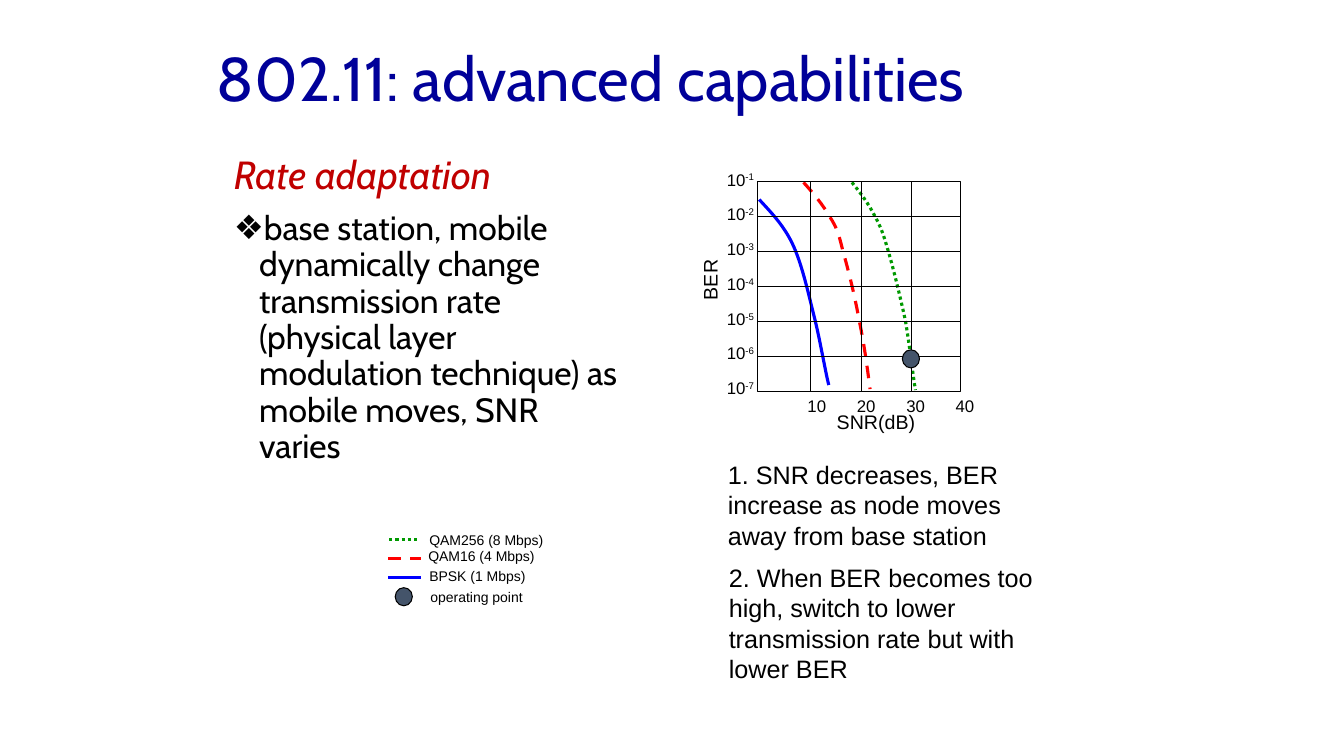
from lxml.etree import SubElement
from pptx import Presentation
from pptx.dml.color import RGBColor
from pptx.enum.dml import MSO_LINE
from pptx.enum.shapes import MSO_CONNECTOR, MSO_SHAPE
from pptx.enum.text import MSO_ANCHOR, MSO_AUTO_SIZE as AUTO_SIZE, PP_ALIGN
from pptx.oxml.ns import qn
from pptx.util import Inches, Pt

COLORS = {
    "title": "000099",
    "heading": "C00000",
    "text": "000000",
    "bpsk": "0000FF",
    "qam16": "FF0000",
    "qam256": "009900",
    "point": "44546A",
}
DASHES = {"qam16": MSO_LINE.DASH, "qam256": MSO_LINE.ROUND_DOT}

# Each curve is a chain of cubic segments: start, then control, control, end
CURVES = {
    "bpsk": [(7.53, 1.98), (7.64, 2.1), (7.77, 2.23), (7.86, 2.42),
             (7.95, 2.61), (8.01, 2.88), (8.07, 3.12),
             (8.13, 3.35), (8.19, 3.71), (8.22, 3.82)],
    "qam16": [(7.97, 1.81), (8.07, 1.92), (8.16, 2.03), (8.23, 2.15),
              (8.3, 2.26), (8.32, 2.32), (8.36, 2.49),
              (8.41, 2.66), (8.48, 2.94), (8.52, 3.17),
              (8.57, 3.4), (8.6, 3.63), (8.63, 3.86)],
    "qam256": [(8.45, 1.81), (8.54, 1.92), (8.62, 2.03), (8.68, 2.15),
               (8.74, 2.26), (8.76, 2.32), (8.81, 2.49),
               (8.86, 2.66), (8.93, 2.95), (8.98, 3.18),
               (9.02, 3.41), (9.06, 3.76), (9.08, 3.87)],
}
# Series, x from, x to, line y, label, label left, label top
LEGEND = [
    ("bpsk", 3.85, 4.18, 5.73, "BPSK (1 Mbps)", 4.16, 5.58),
    ("qam16", 3.85, 4.18, 5.54, "QAM16 (4 Mbps)", 4.15, 5.38),
    ("qam256", 3.86, 4.16, 5.35, "QAM256 (8 Mbps)", 4.16, 5.22),
]
PLOT_LEFT, PLOT_TOP, PLOT_WIDTH, PLOT_HEIGHT = 7.51, 1.8, 2.02, 2.08


def rgb(name):
    return RGBColor.from_string(COLORS[name])


def add_run(paragraph, text, size=12, font="Arial", color="text",
            italic=False, superscript=False):
    run = paragraph.add_run()
    run.text = text
    run.font.size = Pt(size)
    run.font.name = font
    run.font.italic = italic
    run.font.color.rgb = rgb(color)
    if superscript:
        run._r.get_or_add_rPr().set("baseline", "30000")


def place(shape, left, top, width, height):
    shape.left, shape.top = Inches(left), Inches(top)
    shape.width, shape.height = Inches(width), Inches(height)


def add_label(slide, text, left, top, width, height, size=12, wrap=False,
              exponent=None, rotation=0):
    box = slide.shapes.add_textbox(
        Inches(left), Inches(top), Inches(width), Inches(height))
    box.rotation = rotation
    box.text_frame.word_wrap = wrap
    box.text_frame.auto_size = AUTO_SIZE.SHAPE_TO_FIT_TEXT
    paragraph = box.text_frame.paragraphs[0]
    add_run(paragraph, text, size=size)
    if exponent:
        add_run(paragraph, exponent, size=size, superscript=True)


def style_line(line, color="text", width=0.75, dash=None):
    line.color.rgb = rgb(color)
    line.width = Pt(width)
    if dash:
        line.dash_style = dash


def add_line(slide, x1, y1, x2, y2, **line_format):
    connector = slide.shapes.add_connector(
        MSO_CONNECTOR.STRAIGHT, Inches(x1), Inches(y1), Inches(x2), Inches(y2))
    style_line(connector.line, **line_format)
    SubElement(connector._element.spPr, qn("a:effectLst"))
    return connector


def add_curve(slide, series):
    start, *points = [(Inches(x), Inches(y)) for x, y in CURVES[series]]
    builder = slide.shapes.build_freeform(*start)
    builder.add_line_segments(points, close=False)
    curve = builder.convert_to_shape()
    # Turn every three straight segments into one cubic segment
    outline = next(curve._element.iter(qn("a:path")))
    segments = outline.findall(qn("a:lnTo"))
    for first in range(0, len(segments), 3):
        cubic = SubElement(outline, qn("a:cubicBezTo"))
        for segment in segments[first:first + 3]:
            cubic.append(segment[0])
            outline.remove(segment)
    curve.fill.background()
    curve.shadow.inherit = False
    style_line(curve.line, series, 2.25, DASHES.get(series))


def add_preset(slide, preset, left, top, width, height, fill=None):
    shape = slide.shapes.add_shape(
        preset, Inches(left), Inches(top), Inches(width), Inches(height))
    shape.shadow.inherit = False
    if fill:
        shape.fill.solid()
        shape.fill.fore_color.rgb = rgb(fill)
    else:
        shape.fill.background()
    style_line(shape.line)
    return shape


def add_operating_point(slide, left, top):
    add_preset(slide, MSO_SHAPE.OVAL, left, top, 0.17, 0.18, "point")


def format_item(paragraph, bullet=None):
    paragraph.line_spacing = 0.9
    paragraph.space_before = Pt(10 if bullet else 0)
    properties = paragraph._p.get_or_add_pPr()
    properties.set("marL", str(Inches(0.25)))
    properties.set("indent", str(-Inches(0.25)))
    if bullet:
        SubElement(properties, qn("a:buFont"), typeface="Arial")
        SubElement(properties, qn("a:buChar"), char=bullet)
    else:
        SubElement(properties, qn("a:buNone"))
    tabs = SubElement(properties, qn("a:tabLst"))
    SubElement(tabs, qn("a:tab"), pos=str(Inches(0.82)), algn="l")


def fill_title(title):
    place(title, 2.05, 0.3, 8.5, 0.92)
    title.text_frame.vertical_anchor = MSO_ANCHOR.MIDDLE
    title.text_frame.auto_size = AUTO_SIZE.NONE
    paragraph = title.text_frame.paragraphs[0]
    paragraph.alignment = PP_ALIGN.LEFT
    add_run(paragraph, "802.11: advanced capabilities",
            size=44, font="Cabin", color="title")


def fill_body(body):
    place(body, 2.22, 1.49, 4.1, 5.08)
    frame = body.text_frame
    frame.auto_size = AUTO_SIZE.NONE
    heading, item = frame.paragraphs[0], frame.add_paragraph()
    format_item(heading)
    add_run(heading, "Rate adaptation",
            size=28, font="Cabin", color="heading", italic=True)
    format_item(item, bullet="❖")
    add_run(item, "base station, mobile dynamically change transmission rate "
            "(physical layer modulation technique) as mobile moves, SNR varies",
            size=24, font="Cabin")


def draw_legend(slide):
    for series, x1, x2, y, label, left, top in LEGEND:
        add_line(slide, x1, y, x2, y, color=series, width=2.25,
                 dash=DASHES.get(series))
        add_label(slide, label, left, top, 1.4, 0.27, size=10)
    add_operating_point(slide, 3.92, 5.83)
    add_label(slide, "operating point", 4.17, 5.79, 1.2, 0.27, size=10)


def draw_plot(slide):
    for series in CURVES:
        add_curve(slide, series)
    plot = add_preset(slide, MSO_SHAPE.RECTANGLE,
                      PLOT_LEFT, PLOT_TOP, PLOT_WIDTH, PLOT_HEIGHT)
    # Grid: six rows and four columns
    for row in range(1, 6):
        y = PLOT_TOP + row * PLOT_HEIGHT / 6
        line = add_line(slide, PLOT_LEFT, y, PLOT_LEFT + PLOT_WIDTH, y)
        if row == 3:
            line.begin_connect(plot, 1)
            line.end_connect(plot, 3)
    for column in range(3):
        x = 8.04 + column * 0.5
        add_line(slide, x, PLOT_TOP, x, PLOT_TOP + PLOT_HEIGHT)
    # Axis labels
    for index in range(4):
        add_label(slide, str(10 * (index + 1)),
                  7.91 + index * 0.49, 3.88, 0.39, 0.3)
    for index in range(7):
        add_label(slide, "10", 7.11, 1.63 + index * 0.69 / 2, 0.48, 0.3,
                  exponent=f"-{index + 1}")
    add_label(slide, "SNR(dB)", 8.2, 4.02, 0.98, 0.33, size=14)
    add_label(slide, "BER", 6.74, 2.61, 0.6, 0.33, size=14, rotation=270)
    add_operating_point(slide, 8.95, 3.47)


def main():
    presentation = Presentation()
    presentation.slide_width = Inches(13.33)
    presentation.slide_height = Inches(7.5)
    slide = presentation.slides.add_slide(presentation.slide_layouts[1])
    fill_title(slide.shapes.title)
    fill_body(slide.placeholders[1])
    draw_legend(slide)
    draw_plot(slide)
    # Remarks below the plot
    add_label(slide, "1. SNR decreases, BER increase as node moves away from "
              "base station", 7.12, 4.51, 3.5, 1, size=18, wrap=True)
    add_label(slide, "2. When BER becomes too high, switch to lower "
              "transmission rate but with lower BER",
              7.13, 5.53, 3.5, 1.3, size=18, wrap=True)
    presentation.save("out.pptx")


if __name__ == "__main__":
    main()
